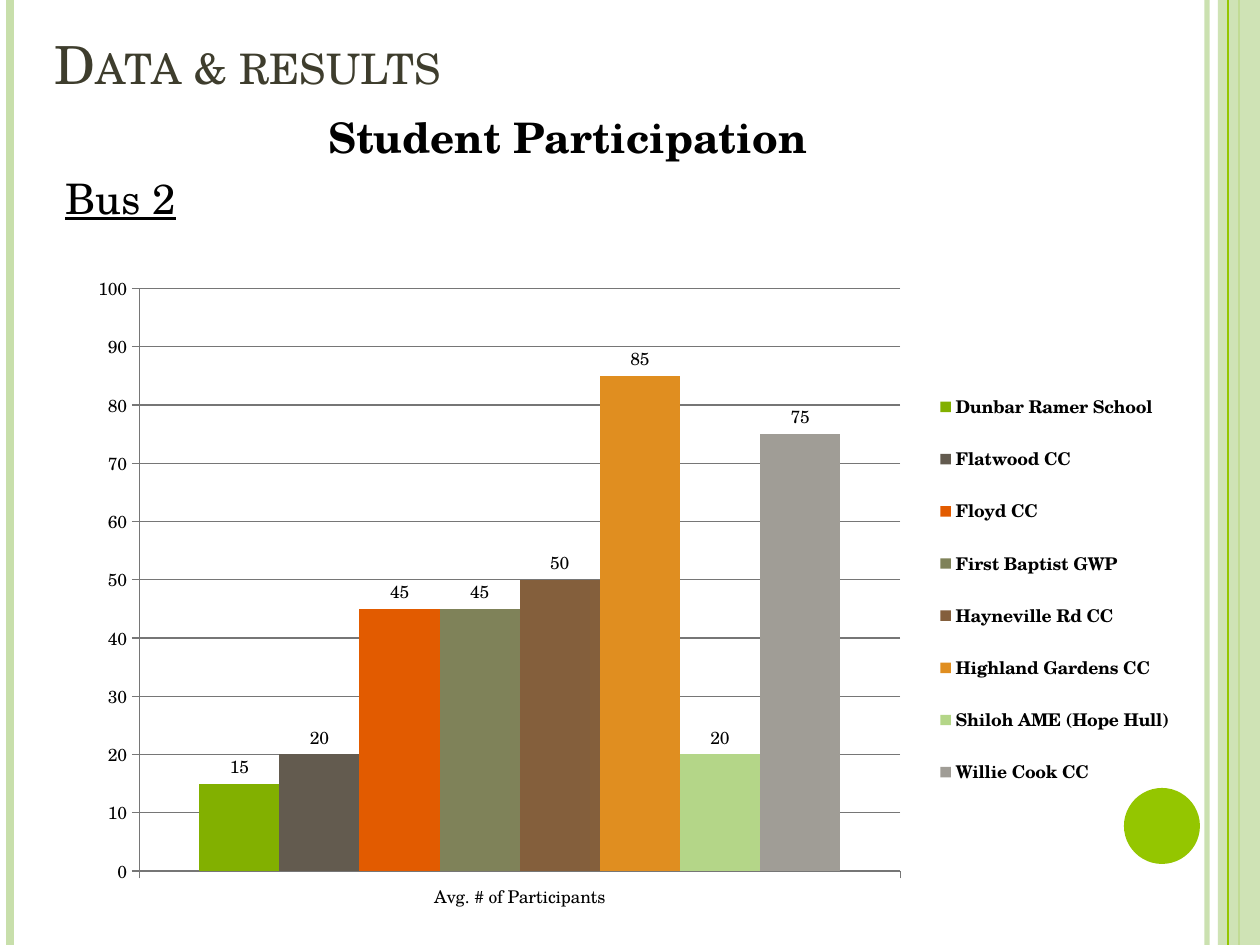
from lxml import etree
from pptx import Presentation, util as u
from pptx.chart import data as chart_data
from pptx.dml.color import RGBColor
from pptx.enum import chart as charts, shapes, text
from pptx.oxml import ns

SCALE = 914400 / 126
FONT = "TeX Gyre Schola"
BLACK = RGBColor(0x00, 0x00, 0x00)
GRID = RGBColor(0x76, 0x76, 0x76)
OLIVE = RGBColor(0x3E, 0x3D, 0x2D)
GREEN = RGBColor(0x94, 0xC6, 0x00)
PALE = RGBColor(0xC8, 0xDF, 0xAB)
SERIES = [
    ("Dunbar Ramer School", 15, RGBColor(0x82, 0xB0, 0x00)),
    ("Flatwood CC", 20, RGBColor(0x63, 0x5B, 0x4F)),
    ("Floyd CC", 45, RGBColor(0xE2, 0x5B, 0x00)),
    ("First Baptist GWP", 45, RGBColor(0x7F, 0x82, 0x59)),
    ("Hayneville Rd CC", 50, RGBColor(0x84, 0x5F, 0x3C)),
    ("Highland Gardens CC", 85, RGBColor(0xE0, 0x8E, 0x20)),
    ("Shiloh AME (Hope Hull)", 20, RGBColor(0xB4, 0xD6, 0x88)),
    ("Willie Cook CC", 75, RGBColor(0xA0, 0x9D, 0x96)),
]


def px(*lengths):
    return [u.Emu(round(length * SCALE)) for length in lengths]


def apply(target, **values):
    for name, value in values.items():
        setattr(target, name, value)


def style_font(font, color=BLACK, **values):
    apply(font, name=FONT, **values)
    font.color.rgb = color


def set_alpha(shape, percent):
    color = next(shape._element.spPr.iter(ns.qn("a:srgbClr")))
    etree.SubElement(color, ns.qn("a:alpha")).set("val", str(percent * 1000))


def add_stripe(page, x, height, color, width):
    line = page.shapes.add_connector(shapes.MSO_CONNECTOR.STRAIGHT, *px(x, 0, x, height))
    line.line.color.rgb = color
    line.line.width = u.Pt(width)
    etree.SubElement(line._element.spPr, ns.qn("a:effectLst"))
    return line


def add_solid(page, kind, box, color):
    shape = page.shapes.add_shape(kind, *px(*box))
    shape.shadow.inherit = False
    shape.fill.solid()
    shape.fill.fore_color.rgb = color
    shape.line.fill.background()
    return shape


def add_border(page, box):
    left, top, width, height = box
    right = left + width
    set_alpha(add_stripe(page, right - 53, height, PALE, 3), 93)
    add_stripe(page, left + 10, height, PALE, 4.5)
    add_stripe(page, right - 21, height, GREEN, 1.5)
    band = add_solid(page, shapes.MSO_SHAPE.RECTANGLE, (right - 42, top, 42, height), PALE)
    set_alpha(band, 87)
    add_stripe(page, right - 32, height, GREEN, 0.75)
    add_solid(page, shapes.MSO_SHAPE.OVAL, (right - 136, top + height - 157, 76, 76), GREEN)


def add_title(page, box):
    title = page.shapes.title
    apply(title, **dict(zip(("left", "top", "width", "height"), px(*box))))
    apply(title.text_frame, vertical_anchor=text.MSO_ANCHOR.BOTTOM, word_wrap=True)
    para = title.text_frame.paragraphs[0]
    para.alignment = text.PP_ALIGN.LEFT
    span = para.add_run()
    span.text = "Data & results"
    style_font(span.font, OLIVE, size=u.Pt(30))
    span.font._element.set("cap", "small")


def add_headings(page, box):
    frame = page.shapes.add_textbox(*px(*box)).text_frame
    frame.word_wrap = True
    headings = [
        ("Student Participation", text.PP_ALIGN.CENTER, {"bold": True}),
        ("Bus 2", text.PP_ALIGN.LEFT, {"underline": True}),
    ]
    for index, (words, alignment, values) in enumerate(headings):
        para = frame.add_paragraph() if index else frame.paragraphs[0]
        apply(para, alignment=alignment, space_before=u.Pt(6))
        span = para.add_run()
        span.text = words
        style_font(span.font, size=u.Pt(24), **values)


def set_layout(element, position, area, inner=False):
    for old in element.findall(ns.qn("c:layout")):
        element.remove(old)
    layout = etree.Element(ns.qn("c:layout"))
    manual = etree.SubElement(layout, ns.qn("c:manualLayout"))
    values = {"layoutTarget": "inner"} if inner else {}
    values.update(xMode="edge", yMode="edge", **dict(zip("xywh", area)))
    for name, value in values.items():
        etree.SubElement(manual, ns.qn(f"c:{name}")).set("val", str(value))
    element.insert(position, layout)


def add_participation_chart(page, box):
    values = chart_data.CategoryChartData()
    values.categories = ["Avg. # of Participants"]
    for name, count, color in SERIES:
        values.add_series(name, [count])
    kind = charts.XL_CHART_TYPE.COLUMN_CLUSTERED
    chart = page.shapes.add_chart(kind, *px(*box), values).chart
    apply(chart, has_title=False, has_legend=True)
    style_font(chart.font, size=u.Pt(10))

    plot = chart.plots[0]
    apply(plot, gap_width=150, overlap=0, vary_by_categories=False, has_data_labels=True)
    apply(plot.data_labels, show_value=True, position=charts.XL_LABEL_POSITION.OUTSIDE_END)
    for series, (name, count, color) in zip(plot.series, SERIES):
        series.format.fill.solid()
        series.format.fill.fore_color.rgb = color

    axis = chart.value_axis
    apply(axis, minimum_scale=0, maximum_scale=100, major_unit=10, has_major_gridlines=True)
    for line in (axis.format.line, chart.category_axis.format.line, axis.major_gridlines.format.line):
        line.color.rgb = GRID
        line.width = u.Pt(0.75)
    for each in (axis, chart.category_axis):
        each.major_tick_mark = charts.XL_TICK_MARK.OUTSIDE

    apply(chart.legend, position=charts.XL_LEGEND_POSITION.RIGHT, include_in_layout=False)
    style_font(chart.legend.font, size=u.Pt(10), bold=True)
    set_layout(chart._chartSpace.chart.plotArea, 0, (0.06, 0.04, 0.69, 0.88), inner=True)
    set_layout(chart.legend._element, 1, (0.78, 0.16, 0.22, 0.67))


def main():
    deck = Presentation()
    deck.slide_width, deck.slide_height = px(1260, 945)
    page = deck.slides.add_slide(deck.slide_layouts[5])
    add_border(page, (0, 0, 1260, 945))
    add_title(page, (42, 0, 1029, 101))
    add_headings(page, (53, 105, 1029, 672))
    add_participation_chart(page, (73, 262, 1103, 662))
    deck.save("out.pptx")


if __name__ == "__main__":
    main()
